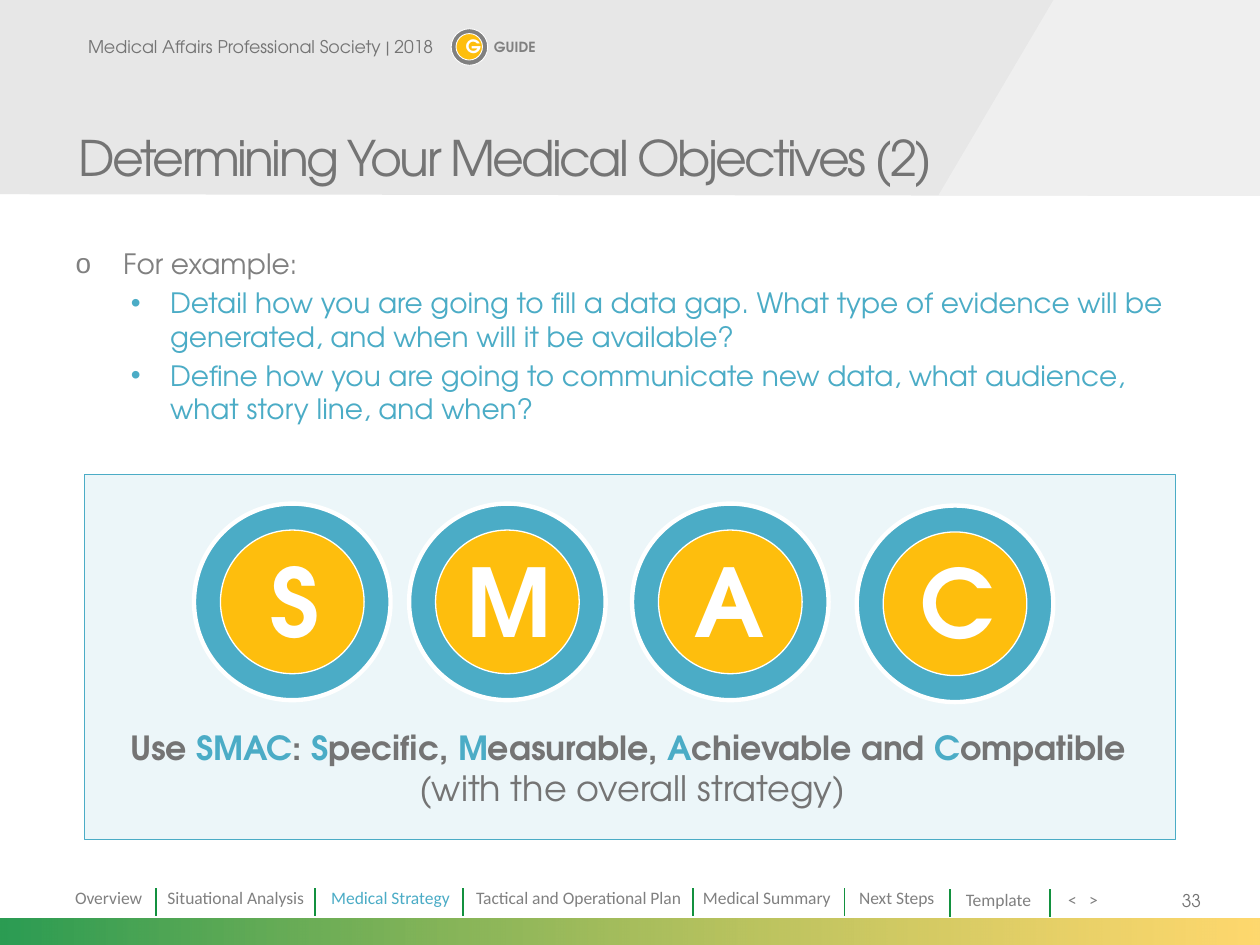
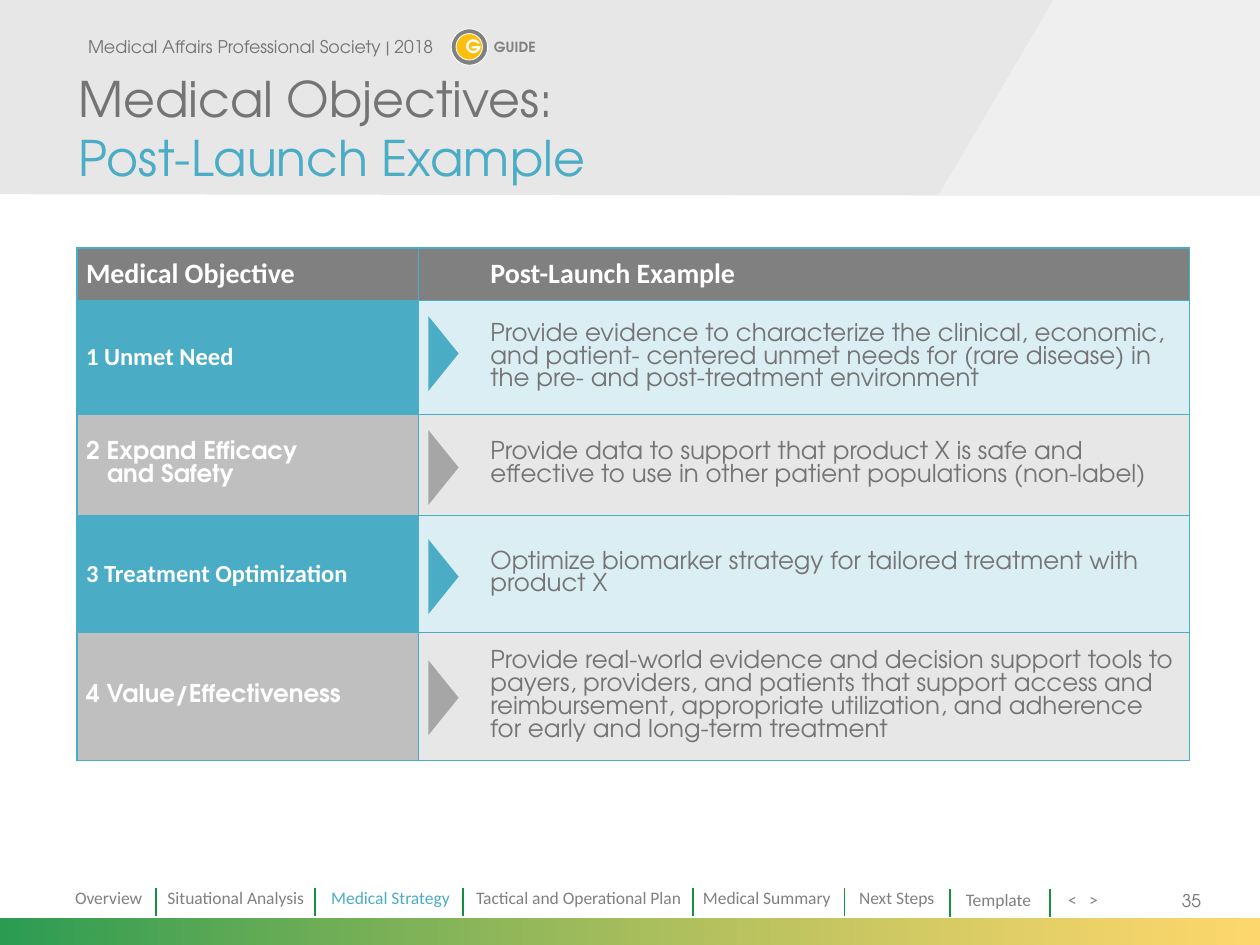
from pptx import Presentation
from pptx.dml.color import RGBColor
from pptx.enum.shapes import MSO_CONNECTOR, MSO_SHAPE
from pptx.enum.text import MSO_ANCHOR, PP_ALIGN
from pptx.oxml.ns import qn
from pptx.util import Pt
from lxml import etree

RECT, OVAL = MSO_SHAPE.RECTANGLE, MSO_SHAPE.OVAL
TRI = MSO_SHAPE.ISOSCELES_TRIANGLE
LINE = MSO_CONNECTOR.STRAIGHT
LEFT, MID, RIGHT = PP_ALIGN.LEFT, PP_ALIGN.CENTER, PP_ALIGN.RIGHT
TOP, CENTRE, BASE = MSO_ANCHOR.TOP, MSO_ANCHOR.MIDDLE, MSO_ANCHOR.BOTTOM

WHITE = RGBColor(0xFF, 0xFF, 0xFF)
PALE = RGBColor(0xF2, 0xF2, 0xF2)
CLOUD = RGBColor(0xE7, 0xE7, 0xE7)
SILVER = RGBColor(0xD9, 0xD9, 0xD9)
ASH = RGBColor(0xBF, 0xBF, 0xBF)
STEEL = RGBColor(0xA6, 0xA6, 0xA6)
GREY = RGBColor(0x80, 0x80, 0x80)
TEXT = RGBColor(0x74, 0x74, 0x74)
BLUE = RGBColor(0x4B, 0xAC, 0xC6)
ICE = RGBColor(0xDB, 0xEE, 0xF4)
GREEN = RGBColor(0x13, 0x91, 0x3F)
GOLD = RGBColor(0xFE, 0xBE, 0x0D)

GOTHIC, SANS = "TeX Gyre Adventor", "Calibri"
BODY = {"name": GOTHIC, "size": Pt(14), "color": TEXT}
SMALL = {**BODY, "size": Pt(10)}
HEAD = {**BODY, "size": Pt(28)}
MENU = {"name": SANS, "size": Pt(10), "color": GREY}
LABEL = {"name": GOTHIC, "size": Pt(14), "bold": True, "color": WHITE}
PLAIN = {"name": SANS}
HUE = {"color": BLUE}

# Shared content
SOCIETY = "Medical Affairs Professional Society | 2018"
ACTIVE = "Medical Strategy"
NAV = [  # text, left, width, top
    ("Overview", 35.8, 61, 503.3), ("Situational Analysis", 88.6, 95, 503.3),
    (ACTIVE, 182.2, 84.2, 503.3),
    ("Tactical and Operational Plan", 265, 136, 503.3),
    ("Medical Summary", 394.6, 90, 503.3), ("Next Steps", 483.8, 62, 503.3),
    ("Template", 544.8, 54, 504.2), ("<", 603.2, 24, 504.2),
    (">", 615.2, 24, 504.2),
]
BARS = [(89.3, 507.6), (180, 507.6), (264.4, 507.6), (396, 507.6),
        (482.6, 507.6), (542.9, 508.3), (600, 508.3)]
BAND = [(0, 0), (720, 0), (720, 112), (0, 111.4)]
WEDGE = [(601.9, 0), (720, 0), (720, 111.6), (535.7, 112)]

# Objectives slide
POINTS = [
    [("For example:", {"color": GREY})],
    [("Detail how you are going to fill a data gap. What type of evidence "
      "will be generated, and when will it be available?", HUE)],
    [("Define how you are going to communicate new data, what audience, "
      "what story line, and when?", HUE)],
]
MOTTO = [
    [("Use ", {}), ("SMAC", HUE), (": ", {}), ("S", HUE), ("pecific, ", {}),
     ("M", HUE), ("easurable, ", {}), ("A", HUE), ("chievable and ", {}),
     ("C", HUE), ("ompatible ", {})],
    [("(with the overall strategy)", {"size": Pt(20), "bold": False})],
]
DISCS = [("S", 110.9, 287.8, 139), ("M", 233.8, 287.8, 260.8),
         ("A", 361.2, 287.8, 387.2), ("C", 489.6, 288.9, 517)]

# Example slide
COLS = [195.1, 440.6]
HEADS = ["Medical Objective", "Post-Launch Example"]
HEAD_H = 30
ROWS = [  # height, label lines, label style, arrow shift, example
    (64.8, ["1 Unmet Need"], PLAIN, -2.2,
     "Provide evidence to characterize the clinical, economic, and patient- "
     "centered unmet needs for (rare disease) in the pre- and "
     "post-treatment environment"),
    (57.8, ["2 Expand Efficacy", "and Safety"], {}, 1.6,
     "Provide data to support that product X is safe and effective to use "
     "in other patient populations (non-label)"),
    (67, ["3 Treatment Optimization"], PLAIN, 1.6,
     "Optimize biomarker strategy for tailored treatment with product X"),
    (72.6, ["4 Value/Effectiveness"], {}, 1,
     "Provide real-world evidence and decision support tools to payers, "
     "providers, and patients that support access and reimbursement, "
     "appropriate utilization, and adherence for early and long-term "
     "treatment"),
]
TONES = [(BLUE, ICE, BLUE), (ASH, CLOUD, STEEL)]  # label, example, arrow


def write(frame, paras, style, align=LEFT):
    """Each paragraph is a string or a list of (text, changes) runs."""
    for i, para in enumerate(paras):
        p = frame.paragraphs[0] if i == 0 else frame.add_paragraph()
        p.alignment = align
        for text, change in [(para, {})] if isinstance(para, str) else para:
            run = p.add_run()
            run.text = text
            for key, value in {**style, **change}.items():
                if key == "color":
                    run.font.color.rgb = value
                else:
                    setattr(run.font, key, value)
    return frame


def label(slide, box, paras, style, align=LEFT, anchor=TOP, side=7.2):
    frame = slide.shapes.add_textbox(*map(Pt, box)).text_frame
    form = {"word_wrap": True, "vertical_anchor": anchor,
            "margin_left": Pt(side), "margin_right": Pt(side)}
    for key, value in form.items():
        setattr(frame, key, value)
    return write(frame, paras, style, align)


def fade(shape, *alphas):
    for tone, alpha in zip(shape._element.spPr.iter(qn("a:srgbClr")), alphas):
        etree.SubElement(tone, qn("a:alpha"), val=str(alpha * 1000))


def paint(shape, fill, line=None, width=0):
    shape.shadow.inherit = False
    shape.fill.solid()
    shape.fill.fore_color.rgb = fill
    if line is None:
        shape.line.fill.background()
    else:
        shape.line.color.rgb = line
        shape.line.width = Pt(width)
    return shape


def draw(slide, kind, box, *look):
    return paint(slide.shapes.add_shape(kind, *map(Pt, box)), *look)


def outline(slide, points, fill, alpha):
    pen = slide.shapes.build_freeform(*points[0], scale=Pt(1))
    pen.add_line_segments(points[1:], close=True)
    fade(paint(pen.convert_to_shape(), fill), alpha)


def indent(p, left, first, mark=None):
    props = p._p.get_or_add_pPr()
    props.set("marL", str(Pt(left)))
    props.set("indent", str(Pt(first)))
    if mark:
        etree.SubElement(props, qn("a:buFont"), typeface="Arial")
        etree.SubElement(props, qn("a:buChar"), char=mark)


def base(deck, number, title):
    """Blank slide with header band, badge, title and footer."""
    slide = deck.slides.add_slide(deck.slide_layouts[6])
    outline(slide, BAND, SILVER, 62)
    outline(slide, WEDGE, PALE, 79)

    # Footer
    strip = draw(slide, RECT, (0, 524.9, 720, 15.1), GREEN)
    strip.fill.gradient()
    strip.fill.gradient_angle = 0
    for stop, tone in zip(strip.fill.gradient_stops, (GREEN, GOLD)):
        stop.color.rgb = tone
    fade(strip, 90, 60)
    label(slide, (644.4, 500.4, 49, 28.8), [number], SMALL, RIGHT, CENTRE)
    for text, left, width, top in NAV:
        style = {**MENU, **HUE} if text == ACTIVE else MENU
        label(slide, (left, top, width, 19.4), [text], style)
    for x, y in BARS:
        bar = slide.shapes.add_connector(LINE, Pt(x), Pt(y), Pt(x), Pt(y + 15.8))
        bar.line.color.rgb = GREEN
        bar.line.width = Pt(1)
        etree.SubElement(bar._element.spPr, qn("a:effectLst"))

    # Header
    label(slide, (34.8, 12.2, 228.2, 28.8), [SOCIETY], SMALL, MID, CENTRE)
    draw(slide, OVAL, (257.8, 16.4, 20.9, 20.9), GREY, WHITE, 0.5)
    draw(slide, OVAL, (260.6, 19.2, 15.1, 15.1), GOLD, WHITE, 0.5)
    label(slide, (260.8, 16.6, 19.4, 18), ["G"],
          {**LABEL, "size": Pt(10.5)}, MID, side=0)
    label(slide, (269, 18.7, 50.4, 17.3), ["GUIDE"],
          {**LABEL, "size": Pt(8), "color": GREY}, MID)
    head = label(slide, (37.8, 2.2, 576.7, 108), title, HEAD, anchor=BASE)
    return slide, head


def goals(deck):
    slide, head = base(deck, "33", ["Determining Your Medical Objectives (2)"])
    head.paragraphs[0].runs[0].font._element.set("spc", "-150")

    # Bullets
    frame = label(slide, (36.2, 137.5, 646.6, 110), POINTS,
                  {**BODY, "size": Pt(16)})
    for i, p in enumerate(frame.paragraphs):
        if i:
            p.space_before = Pt(3)
            indent(p, 54, -22.5, "•")
        else:
            indent(p, 27, -27, "o")

    # Panel with lettered discs
    panel = draw(slide, RECT, (48.2, 270.9, 623.5, 208.8), BLUE, BLUE, 0.25)
    fade(panel, 10)
    for text, x, y, left in DISCS:
        draw(slide, OVAL, (x, y, 112.3, 112.3), BLUE, WHITE, 2.5)
        draw(slide, OVAL, (x + 15.1, y + 15.1, 82.1, 82.1), GOLD, WHITE, 0.75)
        label(slide, (left, y + 18.7, 59.8, 67.7), [text],
              {**LABEL, "size": Pt(54)}, MID, side=0)
    label(slide, (25.9, 411.8, 671, 55.4), MOTTO,
          {**BODY, "size": Pt(19), "bold": True}, MID)


def cell_look(cell, fill, widths):
    props = cell._tc.get_or_add_tcPr()
    for side, width in zip("LRTB", widths):
        edge = etree.SubElement(props, qn("a:ln" + side), w=str(Pt(width)))
        ink = etree.SubElement(edge, qn("a:solidFill"))
        etree.SubElement(ink, qn("a:srgbClr"), val=str(BLUE))
    cell.fill.solid()
    cell.fill.fore_color.rgb = fill
    form = {"vertical_anchor": CENTRE, "margin_left": Pt(5.3),
            "margin_right": Pt(5.04), "margin_top": Pt(2.88),
            "margin_bottom": Pt(2.88)}
    for key, value in form.items():
        setattr(cell, key, value)


def example(deck):
    slide, _ = base(deck, "35", ["Medical Objectives:",
                                 [("Post-Launch Example", HUE)]])
    left, top = 43.9, 141.8
    highs = [HEAD_H] + [row[0] for row in ROWS]
    grid = slide.shapes.add_table(
        len(highs), 2, *map(Pt, (left, top, sum(COLS), sum(highs)))).table
    grid.first_row = grid.horz_banding = False
    for col, width in zip(grid.columns, COLS):
        col.width = Pt(width)
    for row, high in zip(grid.rows, highs):
        row.height = Pt(high)

    # Cell text
    for j, text in enumerate(HEADS):
        write(grid.cell(0, j).text_frame, [text],
              {**LABEL, **PLAIN, "size": Pt(16)})
    for i, (_, lines, change, _, text) in enumerate(ROWS, 1):
        name = write(grid.cell(i, 0).text_frame, lines, {**LABEL, **change})
        write(grid.cell(i, 1).text_frame, [text], BODY)
        for p in name.paragraphs[1:]:
            indent(p, 12, 0)

    # Fills, borders and arrows
    y = top
    for i, high in enumerate(highs):
        tones = TONES[(i - 1) % 2] if i else (GREY, GREY)
        for j in range(2):
            cell = grid.cell(i, j)
            cell_look(cell, tones[j], (0.5 if j else 1, 0.5,
                                       0.5 if i else 1, 0.5))
        indent(grid.cell(i, 1).text_frame.paragraphs[0], 36, 0)
        if i:
            spot = y + high / 2 + ROWS[i - 1][3]
            arrow = draw(slide, TRI, (232, spot - 8.6, 42.8, 17.3), tones[2])
            arrow.rotation = 90
        y += high


def main():
    deck = Presentation()
    deck.slide_width, deck.slide_height = Pt(720), Pt(540)
    goals(deck)
    example(deck)
    deck.save("out.pptx")


if __name__ == "__main__":
    main()
